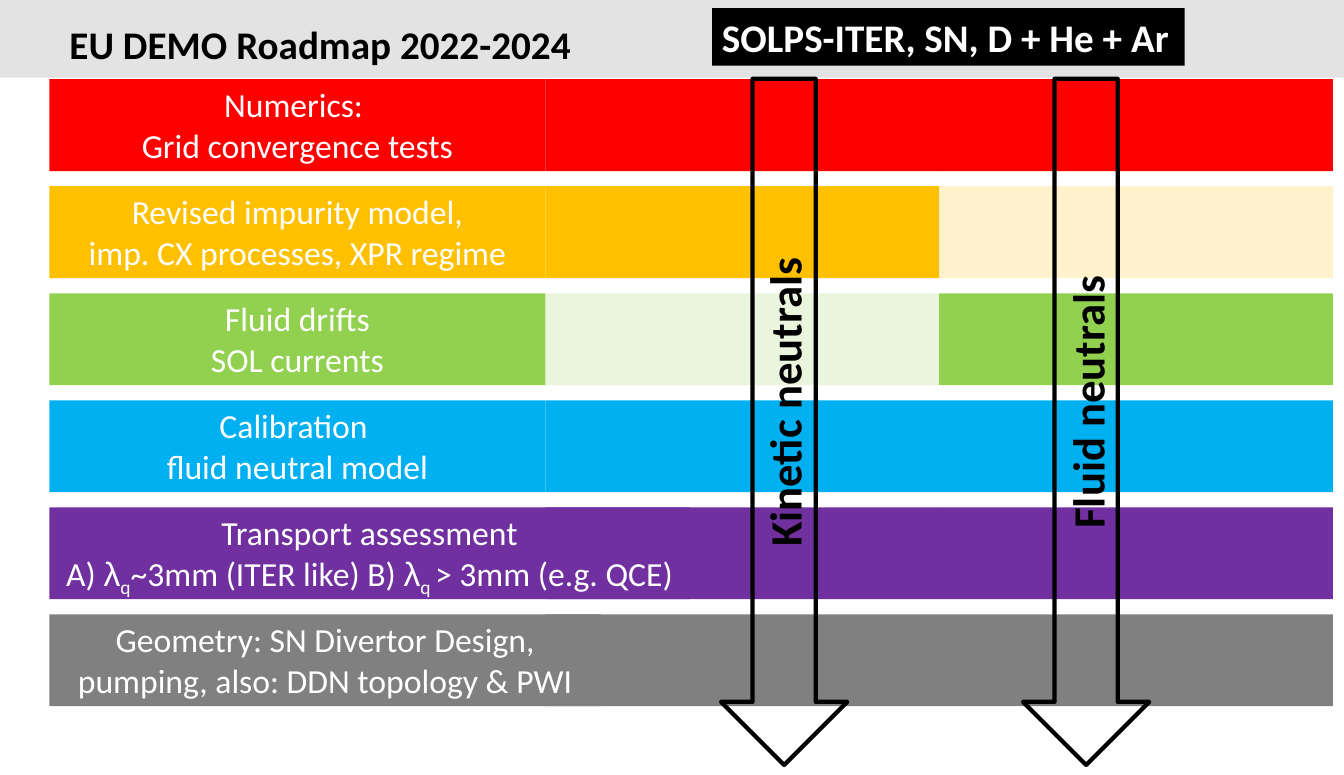
from lxml.etree import SubElement
from pptx import Presentation
from pptx.dml.color import RGBColor
from pptx.enum.shapes import MSO_SHAPE
from pptx.enum.text import MSO_ANCHOR, MSO_AUTO_SIZE, PP_ALIGN
from pptx.oxml.ns import qn
from pptx.util import Cm, Pt

BLACK = RGBColor(0x00, 0x00, 0x00)
WHITE = RGBColor(0xFF, 0xFF, 0xFF)
HEADER_GRAY = RGBColor(0xE3, 0xE3, 0xE3)
RED = RGBColor(0xFF, 0x00, 0x00)
AMBER = RGBColor(0xFF, 0xC0, 0x00)
GREEN = RGBColor(0x92, 0xD0, 0x50)
BLUE = RGBColor(0x00, 0xB0, 0xF0)
PURPLE = RGBColor(0x70, 0x30, 0xA0)
GRAY = RGBColor(0x80, 0x80, 0x80)

# Grid, in percent of the slide's size
LABEL_LEFT, LABEL_WIDTH = 3.68, 36.9
CELL_LEFT, CELL_WIDTH = 40.58, 29.3
ROW_TOP, ROW_PITCH, ROW_HEIGHT = 10.22, 13.81, 11.85
PALE = 20  # opacity of a cell that does not apply

# Text sizes in points
LABEL_SIZE, HEADING_SIZE, ARROW_SIZE = 23.94, 27.94, 31.94

GREEK = {"font": "Arial"}
SUBSCRIPT = {"baseline": -25000}

# Colour, label width, opacity of the two cells, label spans
TOPICS = [
    (RED, LABEL_WIDTH, (100, 100), [("Numerics: \nGrid convergence tests", {})]),
    (AMBER, LABEL_WIDTH, (100, PALE),
     [("Revised impurity model,\nimp. CX processes, XPR regime", {})]),
    (GREEN, LABEL_WIDTH, (PALE, 100), [("Fluid drifts\nSOL currents", {})]),
    (BLUE, LABEL_WIDTH, (100, 100), [("Calibration \nfluid neutral model", {})]),
    (PURPLE, 47.64, (100, 100),
     [("Transport assessment\nA) ", {}), ("λ", GREEK), ("q", SUBSCRIPT),
      ("~3mm (ITER like) B) ", {}), ("λ", GREEK), ("q ", SUBSCRIPT),
      ("> 3mm (e.g. QCE)", {})]),
    (GRAY, 41.03, (100, 100),
     [("Geometry: SN Divertor Design, pumping, also: DDN topology & PWI", {})]),
]

# Arrow left, text, text left, text width
NEUTRALS = [
    (53.65, "Kinetic neutrals", 46.74, 23.22),
    (76.12, "Fluid neutrals", 70.64, 20.51),
]


def add_text(para, text, size=LABEL_SIZE, color=WHITE, bold=False, font="Calibri", baseline=0):
    for index, line in enumerate(text.split("\n")):
        if index:
            para.add_line_break()
        span = para.add_run()
        span.text = line
        span.font.size = Pt(size)
        span.font.name = font
        span.font.bold = bold
        span.font.color.rgb = color
        if baseline:
            span.font._element.set("baseline", str(baseline))


class Page:
    def __init__(self, deck):
        self.deck = deck
        self.shapes = deck.slides.add_slide(deck.slide_layouts[6]).shapes

    def area(self, left, top, width, height):
        across, down = self.deck.slide_width / 100, self.deck.slide_height / 100
        return (round(left * across), round(top * down),
                round(width * across), round(height * down))

    def block(self, area, color, opacity=100):
        box = self.shapes.add_shape(MSO_SHAPE.RECTANGLE, *self.area(*area))
        box.shadow.inherit = False
        box.fill.solid()
        box.fill.fore_color.rgb = color
        box.line.fill.background()
        if opacity < 100:
            shade = box._element.spPr.find(qn("a:solidFill"))[0]
            SubElement(shade, qn("a:alpha"), val=str(opacity * 1000))
        return box

    def topic(self, row, color, width, opacities, spans):
        top = ROW_TOP + row * ROW_PITCH
        for column, opacity in enumerate(opacities):
            left = CELL_LEFT + column * CELL_WIDTH
            self.block((left, top, CELL_WIDTH, ROW_HEIGHT), color, opacity)
        label = self.block((LABEL_LEFT, top, width, ROW_HEIGHT), color)
        label.text_frame.word_wrap = True
        label.text_frame.vertical_anchor = MSO_ANCHOR.TOP
        para = label.text_frame.paragraphs[0]
        para.alignment = PP_ALIGN.CENTER
        for text, style in spans:
            add_text(para, text, **style)

    def heading(self, area, text, fill=None, rotation=0, **style):
        box = self.shapes.add_textbox(*self.area(*area))
        box.rotation = rotation
        if fill is not None:
            box.fill.solid()
            box.fill.fore_color.rgb = fill
        box.text_frame.word_wrap = False
        box.text_frame.auto_size = MSO_AUTO_SIZE.SHAPE_TO_FIT_TEXT
        add_text(box.text_frame.paragraphs[0], text, bold=True, **style)

    def arrow(self, left):
        arrow = self.shapes.add_shape(
            MSO_SHAPE.DOWN_ARROW, *self.area(left, 10.16, 9.39, 88.54))
        arrow.shadow.inherit = False
        arrow.fill.background()
        arrow.line.color.rgb = BLACK
        arrow.line.width = Pt(3)


def main():
    deck = Presentation()
    deck.slide_width, deck.slide_height = Cm(33.8), Cm(19.5)
    page = Page(deck)

    # Header band
    page.block((0, 0, 100, 10.03), HEADER_GRAY)

    # Roadmap topics
    for row, topic in enumerate(TOPICS):
        page.topic(row, *topic)

    # Code and species
    page.heading((52.98, 1.04, 35.17, 7.42), "SOLPS-ITER, SN, D + He + Ar",
                 fill=BLACK, size=HEADING_SIZE)

    # Neutral models
    for arrow_left, text, left, width in NEUTRALS:
        page.arrow(arrow_left)
        page.heading((left, 47.53, width, 8.33), text, rotation=270,
                     size=ARROW_SIZE, color=BLACK)

    # Title
    page.heading((4.43, 1.95, 39.23, 7.42), "EU DEMO Roadmap 2022-2024",
                 size=HEADING_SIZE, color=BLACK)

    deck.save("out.pptx")


if __name__ == "__main__":
    main()
